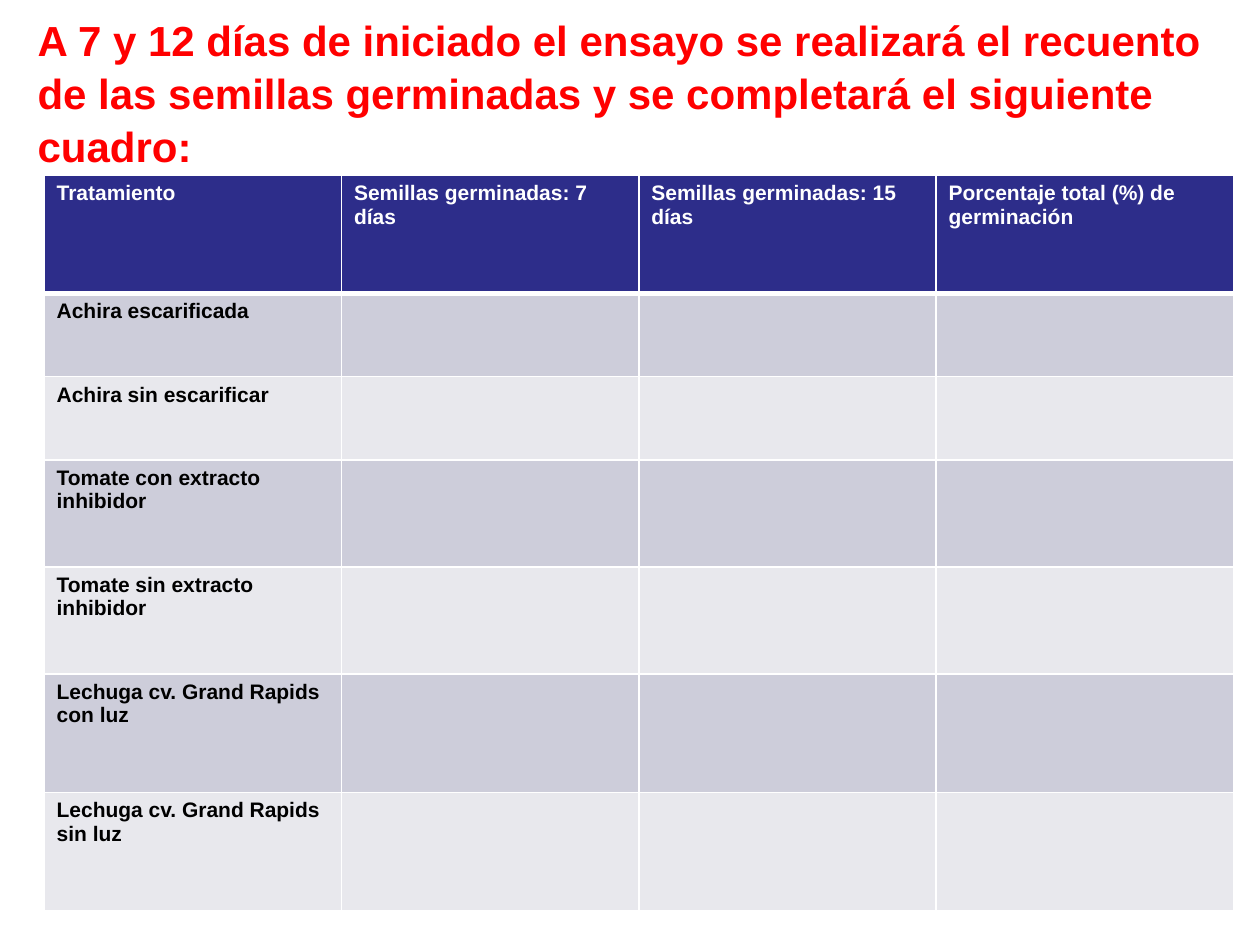
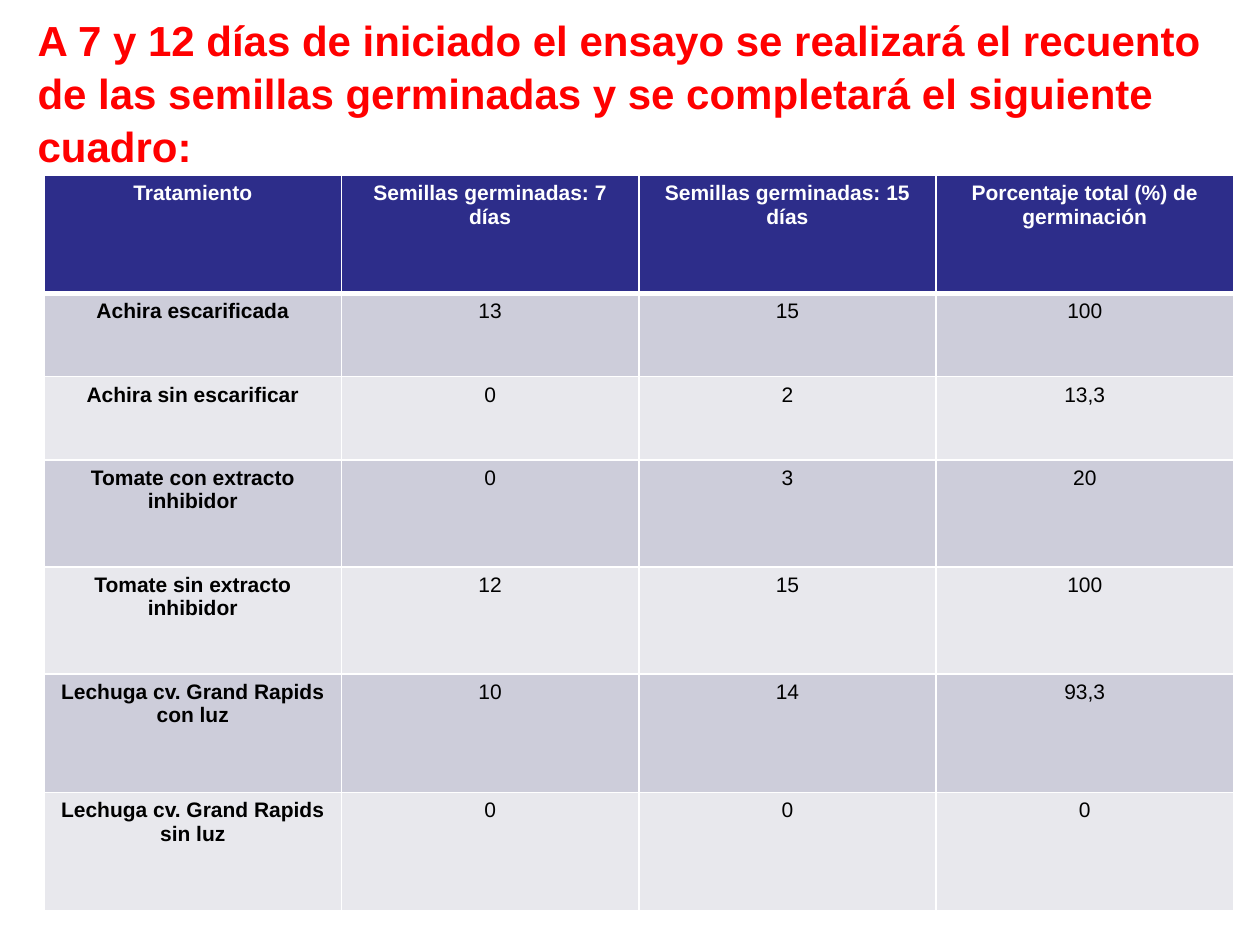
from dataclasses import dataclass
from typing import NamedTuple

from lxml import etree
from pptx import Presentation
from pptx import util as u
from pptx.dml import color
from pptx.enum import text
from pptx.oxml import ns

EMU_PER_PX = 9144
FONT = "Arial"
RED, NAVY, WHITE, BLACK = "FF0000", "2D2D8A", "FFFFFF", "000000"
BANDS = ("CDCDDA", "E8E8ED")

TITLE = ("A 7 y 12 días de iniciado el ensayo se realizará el recuento "
         "de las semillas germinadas y se completará el siguiente cuadro:")
HEADERS = ("Tratamiento", "Semillas germinadas: 7 días",
           "Semillas germinadas: 15 días", "Porcentaje total (%) de germinación")
COLUMN_WIDTH = 236
ROW_HEIGHTS = (94, 66, 66, 85, 85, 94, 94)


class Treatment(NamedTuple):
    name: str
    results: tuple[str, str, str]


@dataclass(frozen=True)
class CellStyle:
    fill: str
    ink: str
    bold: bool
    top: int = 1
    bottom: int = 1


@dataclass(frozen=True)
class ResultsSlide:
    alignment: text.PP_ALIGN
    show_results: bool


TREATMENTS = (
    Treatment("Achira escarificada", ("13", "15", "100")),
    Treatment("Achira sin escarificar", ("0", "2", "13,3")),
    Treatment("Tomate con extracto inhibidor", ("0", "3", "20")),
    Treatment("Tomate sin extracto inhibidor", ("12", "15", "100")),
    Treatment("Lechuga cv. Grand Rapids con luz", ("10", "14", "93,3")),
    Treatment("Lechuga cv. Grand Rapids sin luz", ("0", "0", "0")),
)
SLIDES = (
    ResultsSlide(text.PP_ALIGN.LEFT, False),
    ResultsSlide(text.PP_ALIGN.CENTER, True),
)


def px(length: int) -> u.Emu:
    return u.Emu(length * EMU_PER_PX)


def rgb(value: str) -> color.RGBColor:
    return color.RGBColor.from_string(value)


def set_font(paragraph, size: int, ink: str, bold: bool) -> None:
    font = paragraph.font
    font.name, font.size, font.bold = FONT, u.Pt(size), bold
    font.color.rgb = rgb(ink)


def add_title(slide) -> None:
    frame = slide.shapes.add_textbox(px(20), px(5), px(961), px(151)).text_frame
    frame.word_wrap = True
    paragraph = frame.paragraphs[0]
    paragraph.text = TITLE
    paragraph.line_spacing = 1.05
    set_font(paragraph, 24, RED, True)


def add_borders(cell, style: CellStyle) -> None:
    properties = cell._tc.get_or_add_tcPr()
    for side, width in (("L", 1), ("R", 1), ("T", style.top), ("B", style.bottom)):
        line = etree.SubElement(properties, ns.qn(f"a:ln{side}"), w=str(u.Pt(width)))
        fill = etree.SubElement(line, ns.qn("a:solidFill"))
        etree.SubElement(fill, ns.qn("a:srgbClr"), val=WHITE)


def fill_cell(cell, content: str, style: CellStyle, alignment: text.PP_ALIGN) -> None:
    add_borders(cell, style)
    cell.fill.solid()
    cell.fill.fore_color.rgb = rgb(style.fill)
    paragraph = cell.text_frame.paragraphs[0]
    paragraph.text = content
    paragraph.alignment = alignment
    set_font(paragraph, 12, style.ink, style.bold)


def add_results_table(slide, layout: ResultsSlide) -> None:
    rows = [HEADERS]
    for treatment in TREATMENTS:
        results = treatment.results if layout.show_results else ("",) * 3
        rows.append((treatment.name, *results))

    table = slide.shapes.add_table(
        len(rows), len(HEADERS), px(35), px(139),
        px(COLUMN_WIDTH * len(HEADERS)), px(sum(ROW_HEIGHTS))).table
    for column in table.columns:
        column.width = px(COLUMN_WIDTH)
    for row, height in zip(table.rows, ROW_HEIGHTS):
        row.height = px(height)

    for row_index, contents in enumerate(rows):
        for column_index, content in enumerate(contents):
            if row_index == 0:
                style = CellStyle(NAVY, WHITE, True, bottom=3)
            else:
                style = CellStyle(BANDS[(row_index - 1) % 2], BLACK, column_index == 0,
                                  top=3 if row_index == 1 else 1)
            fill_cell(table.cell(row_index, column_index), content, style, layout.alignment)


def main() -> None:
    presentation = Presentation()
    presentation.slide_width, presentation.slide_height = px(1000), px(750)
    for layout in SLIDES:
        slide = presentation.slides.add_slide(presentation.slide_layouts[6])
        add_title(slide)
        add_results_table(slide, layout)
    presentation.save("out.pptx")


if __name__ == "__main__":
    main()
